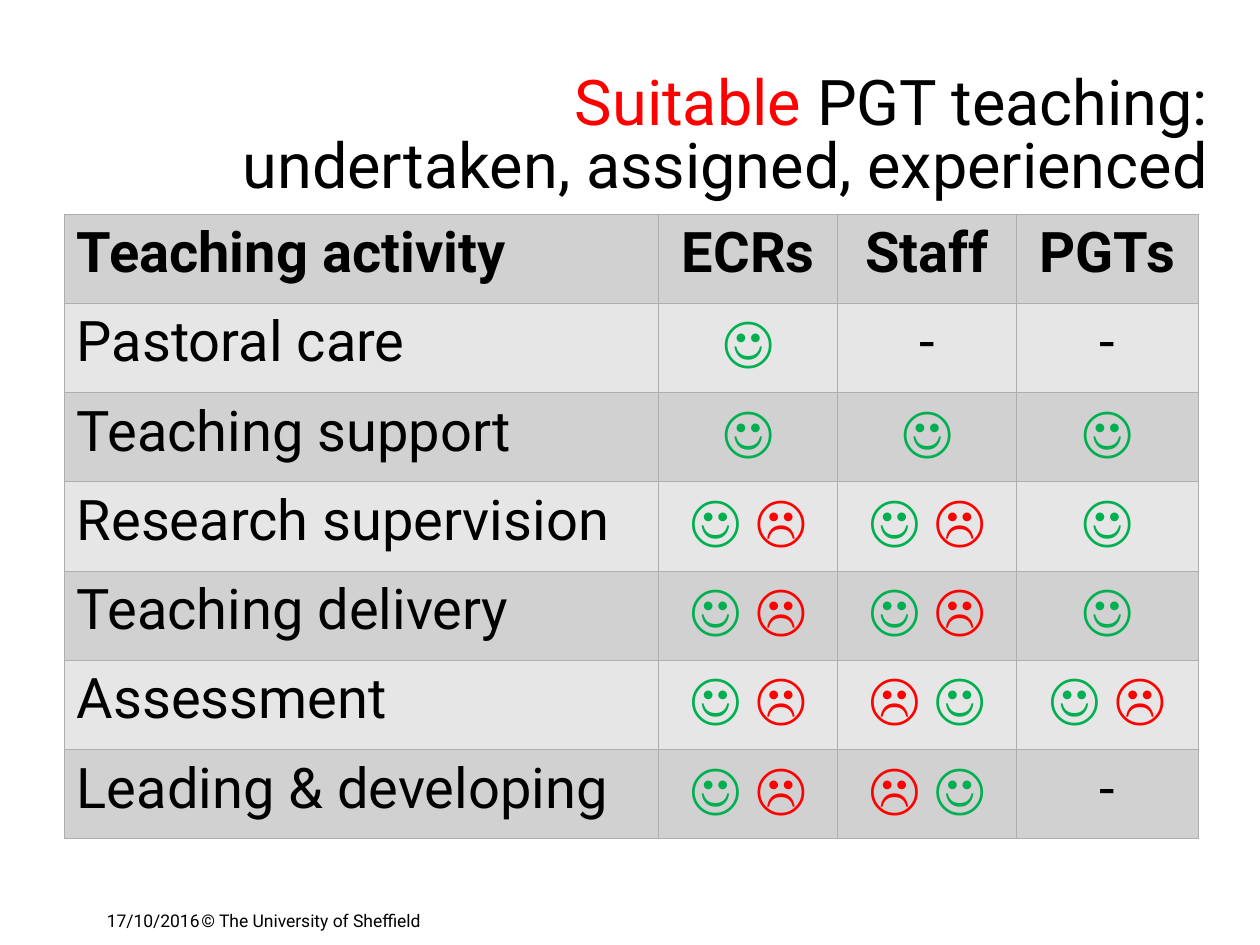
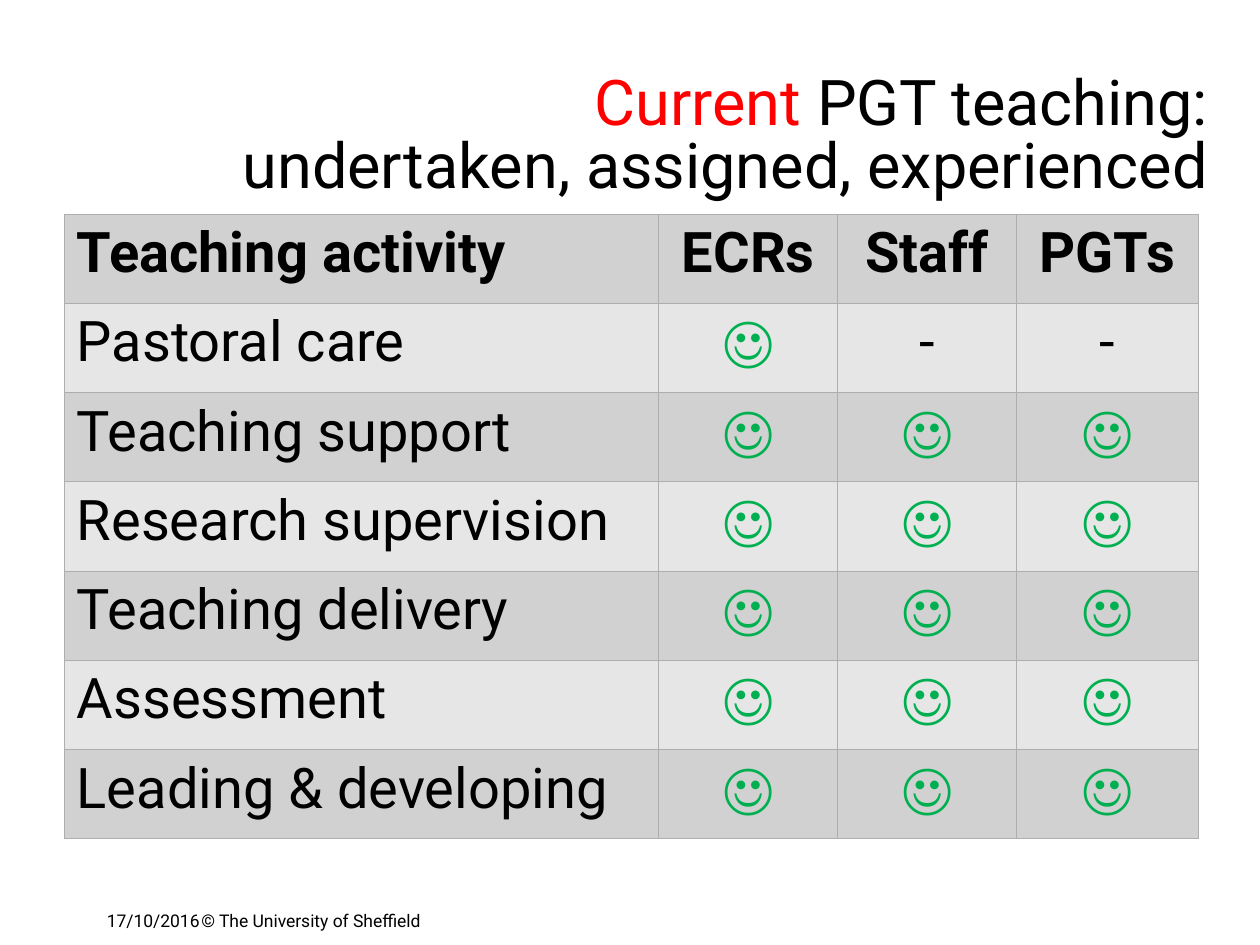
import pptx
import pptx.dml.color
import pptx.enum.text
import pptx.oxml
import pptx.oxml.ns
import pptx.util

COLORS = {
    "ink": "000000",
    "good": "00B050",
    "bad": "FF0000",
    "dark_row": "D1D1D1",
    "light_row": "E6E6E6",
    "border": "AEAEAE",
}
FONT = "Roboto"
GRID_COLUMNS, GRID_ROWS = 100, 75
MARK_COLORS = {"☺": "good", "☹": "bad", "-": "ink"}
ALIGN = pptx.enum.text.PP_ALIGN

HEADINGS = ["Teaching activity", "ECRs", "Staff", "PGTs"]
ACTIVITIES = [
    "Pastoral care",
    "Teaching support",
    "Research supervision",
    "Teaching delivery",
    "Assessment",
    "Leading & developing",
]
COLUMN_SPANS = [47.2, 14.2, 14.2, 14.4]
SUITABLE = [
    ["☺", "-", "-"],
    ["☺", "☺", "☺"],
    ["☺☹", "☺☹", "☺"],
    ["☺☹", "☺☹", "☺"],
    ["☺☹", "☹☺", "☺☹"],
    ["☺☹", "☹☺", "-"],
]
CURRENT = [["☺", "-", "-"]] + [["☺"] * 3] * 5


def rgb(name):
    return pptx.dml.color.RGBColor.from_string(COLORS[name])


def grid_area(prs, left, top, columns, rows):
    column = prs.slide_width / GRID_COLUMNS
    row = prs.slide_height / GRID_ROWS
    return [int(n) for n in (left * column, top * row, columns * column, rows * row)]


def write(frame, runs, size=32, bold=False, align=ALIGN.LEFT, spacing=None):
    paragraph = frame.paragraphs[0]
    paragraph.alignment = align
    if spacing:
        paragraph.line_spacing = spacing
    for words, color in runs:
        for number, line in enumerate(words.split("\n")):
            if number:
                paragraph.add_line_break()
            run = paragraph.add_run()
            run.text = line
            run.font.name = FONT
            run.font.size = pptx.util.Pt(size)
            run.font.bold = bold
            run.font.color.rgb = rgb(color)


def add_title(prs, slide, topic):
    title = slide.shapes.title
    title.left, title.top, title.width, title.height = grid_area(prs, 1.2, 5.2, 95.7, 8.3)
    frame = title.text_frame
    frame.word_wrap = True
    frame.auto_size = pptx.enum.text.MSO_AUTO_SIZE.NONE
    frame.vertical_anchor = pptx.enum.text.MSO_ANCHOR.TOP
    frame.margin_top = pptx.util.Inches(0.08)
    runs = [(topic, "bad"), (" PGT teaching:\nundertaken, assigned, experienced", "ink")]
    write(frame, runs, size=36, align=ALIGN.RIGHT, spacing=0.83)


def add_borders(cell):
    properties = cell._tc.get_or_add_tcPr()
    for side in ("lnL", "lnR", "lnT", "lnB"):
        properties.append(pptx.oxml.parse_xml(
            f'<a:{side} {pptx.oxml.ns.nsdecls("a")} w="{pptx.util.Pt(0.75)}">'
            f'<a:solidFill><a:srgbClr val="{COLORS["border"]}"/></a:solidFill></a:{side}>'
        ))


def mark_runs(marks):
    last = len(marks) - 1
    return [
        (mark + (" " if place < last else ""), MARK_COLORS[mark])
        for place, mark in enumerate(marks)
    ]


def add_ratings(prs, slide, ratings):
    rows = [[[(heading, "ink")] for heading in HEADINGS]]
    for activity, marks in zip(ACTIVITIES, ratings):
        rows.append([[(activity, "ink")]] + [mark_runs(mark) for mark in marks])

    area = grid_area(prs, 5.1, 17, sum(COLUMN_SPANS), 49.6)
    table = slide.shapes.add_table(len(rows), len(HEADINGS), *area).table
    for column, span in zip(table.columns, COLUMN_SPANS):
        column.width = int(prs.slide_width * span / GRID_COLUMNS)

    for r, row in enumerate(rows):
        for c, runs in enumerate(row):
            cell = table.cell(r, c)
            add_borders(cell)
            cell.fill.solid()
            cell.fill.fore_color.rgb = rgb("light_row" if r % 2 else "dark_row")
            write(cell.text_frame, runs, bold=r == 0,
                  align=ALIGN.CENTER if c else ALIGN.LEFT)


def add_footer(prs, slide):
    for left, columns, words in (
        (7.5, 10, "17/10/2016"),
        (15, 56.7, "© The University of Sheffield"),
    ):
        note = slide.shapes.add_textbox(*grid_area(prs, left, 71.7, columns, 3.3))
        note.text_frame.word_wrap = True
        write(note.text_frame, [(words, "ink")], size=10)


def main():
    prs = pptx.Presentation()
    prs.slide_width = pptx.util.Inches(10)
    prs.slide_height = pptx.util.Inches(7.5)
    for topic, ratings in (("Suitable", SUITABLE), ("Current", CURRENT)):
        slide = prs.slides.add_slide(prs.slide_layouts[5])
        add_title(prs, slide, topic)
        add_ratings(prs, slide, ratings)
        add_footer(prs, slide)
    prs.save("out.pptx")


if __name__ == "__main__":
    main()
